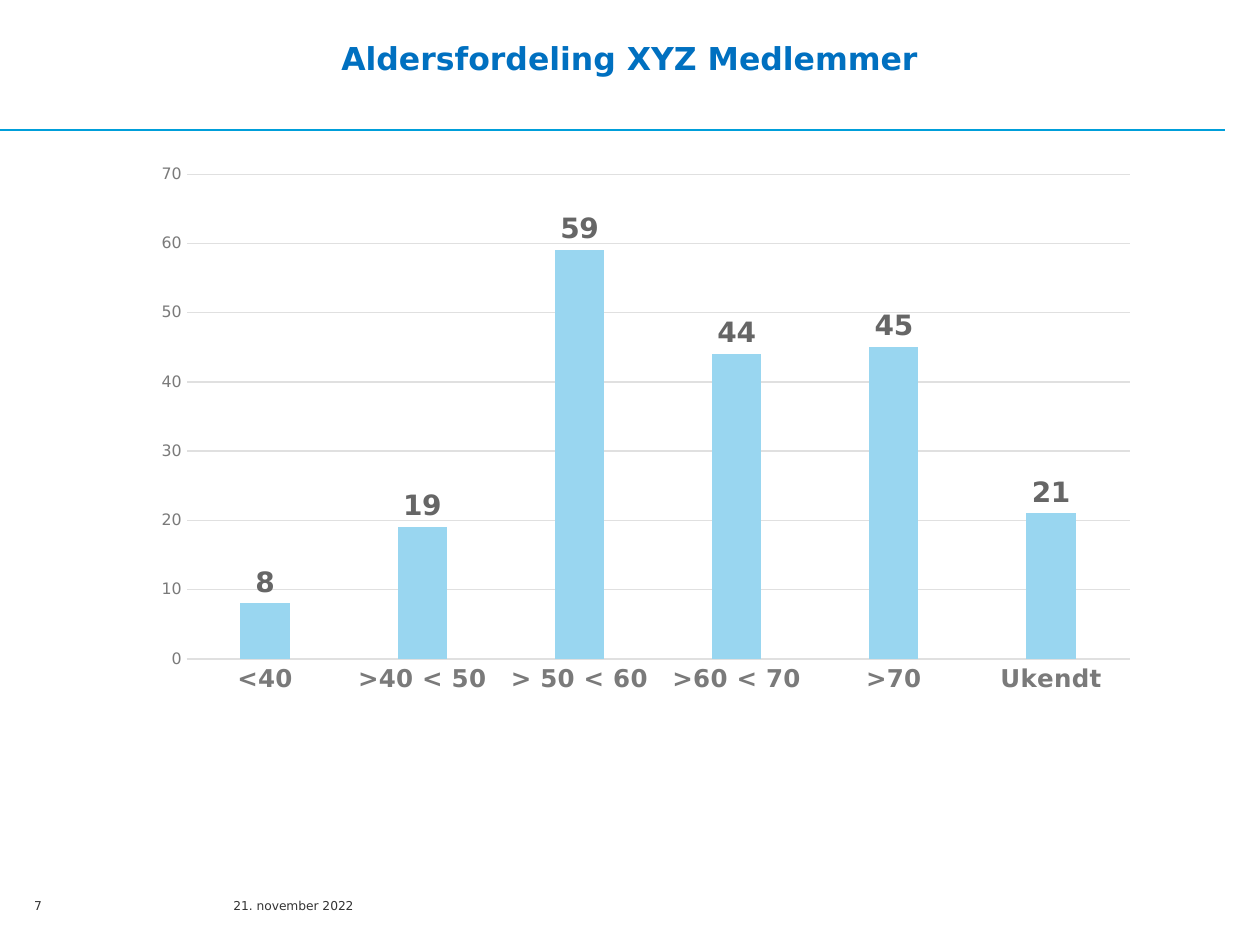
from lxml import etree
from pptx import Presentation
from pptx.chart.data import CategoryChartData
from pptx.dml.color import RGBColor
from pptx.enum.chart import XL_CHART_TYPE, XL_LABEL_POSITION, XL_TICK_MARK
from pptx.enum.shapes import MSO_CONNECTOR
from pptx.enum.text import PP_ALIGN
from pptx.oxml import parse_xml
from pptx.oxml.ns import nsdecls, qn
from pptx.util import Pt

FONT = "DejaVu Sans"
DARK, GREY, GRID = "333333", "7A7A7A", "E0E0E0"
MEMBERS_BY_AGE = {
    "<40": 8,
    ">40 < 50": 19,
    "> 50 < 60": 59,
    ">60 < 70": 44,
    ">70": 45,
    "Ukendt": 21,
}


def color(value):
    return RGBColor.from_string(value)


def style_font(font, size, value, bold=False):
    font.name, font.size, font.bold = FONT, Pt(size), bold
    font.color.rgb = color(value)


def style_line(line, value, width):
    line.color.rgb = color(value)
    line.width = Pt(width)


def add_text(page, box, text, size, value, bold=False, align=PP_ALIGN.LEFT, inset=(0, 0)):
    frame = page.shapes.add_textbox(*map(Pt, box)).text_frame
    frame.word_wrap = True
    frame.margin_left = frame.margin_right = Pt(inset[0])
    frame.margin_top = frame.margin_bottom = Pt(inset[1])
    para = frame.paragraphs[0]
    para.text, para.alignment = text, align
    style_font(para.font, size, value, bold)


def add_header(page, box):
    """Place the centred title in the box and the rule that runs below it."""
    left, top, width, height = box
    add_text(page, box, "Aldersfordeling XYZ Medlemmer", 18, "0070C0",
             bold=True, align=PP_ALIGN.CENTER, inset=(7.2, 3.6))
    rule_y = Pt(top + height + 22.3)
    rule = page.shapes.add_connector(
        MSO_CONNECTOR.STRAIGHT, 0, rule_y, Pt(left + width), rule_y)
    style_line(rule.line, "009FDA", 1)
    etree.SubElement(rule._element.spPr, qn("a:effectLst"))


def add_footer(page, box):
    left, top, width, height = box
    date_offset = 113.8
    add_text(page, (left, top, 18.7, height), "7", 7, DARK)
    add_text(page, (left + date_offset, top, width - date_offset, height),
             "21. november 2022", 7, DARK)


def set_plot_layout(chart, x, y, w, h):
    """Fix the inner plot area, as fractions of the chart."""
    plot_area = chart._chartSpace.chart.plotArea
    for layout in plot_area.findall(qn("c:layout")):
        plot_area.remove(layout)
    places = "".join(f'<c:{tag} val="{value:.4f}"/>'
                     for tag, value in zip("xywh", (x, y, w, h)))
    plot_area.insert(0, parse_xml(
        f'<c:layout {nsdecls("c")}><c:manualLayout>'
        '<c:layoutTarget val="inner"/><c:xMode val="edge"/><c:yMode val="edge"/>'
        f'{places}</c:manualLayout></c:layout>'))


def style_axis(axis, size, bold):
    axis.major_tick_mark = axis.minor_tick_mark = XL_TICK_MARK.NONE
    style_font(axis.tick_labels.font, size, GREY, bold)


def add_age_chart(page, box):
    width, height = box[2:]
    data = CategoryChartData()
    data.categories = list(MEMBERS_BY_AGE)
    data.add_series("Series 1", list(MEMBERS_BY_AGE.values()))
    chart = page.shapes.add_chart(
        XL_CHART_TYPE.COLUMN_CLUSTERED, *map(Pt, box), data).chart
    chart.has_legend = chart.has_title = False
    style_font(chart.font, 10, DARK)
    set_plot_layout(chart, 36 / width, 16.8 / height, 539 / width, 277 / height)

    ages, counts = chart.category_axis, chart.value_axis
    style_axis(ages, 14, True)
    style_line(ages.format.line, GRID, 0.75)
    style_axis(counts, 9, False)
    counts.minimum_scale, counts.maximum_scale, counts.major_unit = 0, 70, 10
    counts.format.line.fill.background()
    style_line(counts.major_gridlines.format.line, GRID, 0.75)

    plot = chart.plots[0]
    plot.gap_width, plot.overlap, plot.vary_by_categories = 219, -27, False
    series = plot.series[0]
    series.format.fill.solid()
    series.format.fill.fore_color.rgb = color("99D6F0")
    labels = series.data_labels
    labels.show_value = True
    labels.position = XL_LABEL_POSITION.OUTSIDE_END
    style_font(labels.font, 16, "666666", True)


def main():
    deck = Presentation()
    deck.slide_width, deck.slide_height = Pt(720), Pt(540)
    page = deck.slides.add_slide(deck.slide_layouts[6])
    add_header(page, (19.6, 18.7, 680.4, 33.1))
    add_footer(page, (19.6, 513.4, 334.8, 14.4))
    add_age_chart(page, (70.6, 82.8, 589.7, 329))
    deck.save("out.pptx")


if __name__ == "__main__":
    main()
